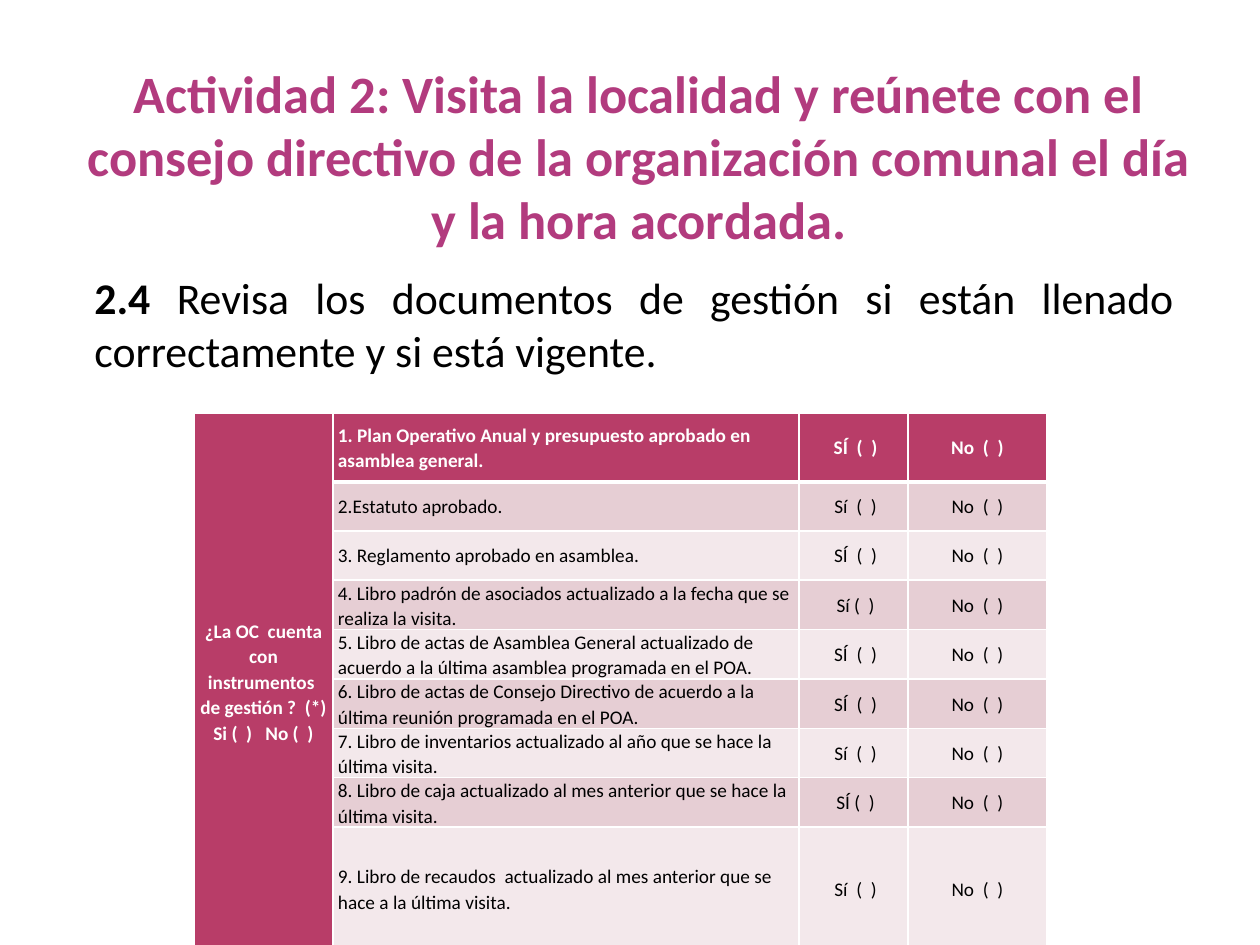
from dataclasses import dataclass

from lxml.etree import SubElement
from pptx import Presentation
from pptx.dml.color import RGBColor
from pptx.enum.text import MSO_ANCHOR as Anchor, MSO_AUTO_SIZE as AutoSize, PP_ALIGN as Align
from pptx.oxml.ns import qn
from pptx.util import Emu, Pt

EMU_PER_PX = 914400 / 126
FONT = "Calibri"
WHITE, BLACK = "FFFFFF", "000000"
PURPLE, CRIMSON = "B23B7E", "B83D68"
BANDS = ("F3E8EB", "E6CED4")

COLUMN_WIDTHS = (139, 466, 109, 139)
HEADER_HEIGHT, ROW_HEIGHT = 69, 49


@dataclass(frozen=True)
class Box:
    left: int
    top: int
    width: int
    height: int


@dataclass(frozen=True)
class Instrument:
    name: str
    yes: str


QUESTION = (
    "¿La OC  cuenta con instrumentos ",
    "de gestión ?  (*)",
    "Si (  )   No (  )",
)
NO = "No  (  )"
INSTRUMENTS = (
    Instrument("1. Plan Operativo Anual y presupuesto aprobado en asamblea general.", " SÍ  (  )"),
    Instrument("2.Estatuto aprobado.", " Sí  (  )"),
    Instrument("3. Reglamento aprobado en asamblea.", " SÍ  (  )"),
    Instrument("4. Libro padrón de asociados actualizado a la fecha que se realiza la visita.", " Sí (  )"),
    Instrument("5. Libro de actas de Asamblea General actualizado de acuerdo a la última "
               "asamblea programada en el POA.", " SÍ  (  )"),
    Instrument("6. Libro de actas de Consejo Directivo de acuerdo a la última reunión "
               "programada en el POA.", " SÍ  (  )"),
    Instrument("7. Libro de inventarios actualizado al año que se hace la última visita.", " Sí  (  )"),
    Instrument("8. Libro de caja actualizado al mes anterior que se hace la última visita.", " SÍ (  )"),
    Instrument("9. Libro de recaudos  actualizado al mes anterior que se hace a la última visita.",
               " Sí  (  )"),
)


def px(length: int) -> Emu:
    return Emu(round(length * EMU_PER_PX))


def rgb(value: str) -> RGBColor:
    return RGBColor.from_string(value)


def place(shape, box: Box) -> None:
    shape.left, shape.top = px(box.left), px(box.top)
    shape.width, shape.height = px(box.width), px(box.height)


def add_run(paragraph, text: str, size: int, color: str, bold: bool) -> None:
    run = paragraph.add_run()
    run.text = text
    run.font.name, run.font.size, run.font.bold = FONT, Pt(size), bold
    run.font.color.rgb = rgb(color)


def add_border(cell, side: str, points: int) -> None:
    """Draw a white border; side is L, R, T or B."""
    properties = cell._tc.get_or_add_tcPr()
    line = SubElement(properties, qn(f"a:ln{side}"), w=str(Pt(points)))
    fill = SubElement(line, qn("a:solidFill"))
    SubElement(fill, qn("a:srgbClr"), val=WHITE)


def fill_cell(cell, lines: tuple[str, ...], align: Align, row: int, header: bool) -> None:
    """Style a cell; borders go before the fill, as the schema orders them."""
    add_border(cell, "L", 1)
    add_border(cell, "R", 1)
    if row == 0:
        add_border(cell, "T", 1)
    add_border(cell, "B", 3 if header else 1)
    cell.fill.solid()
    cell.fill.fore_color.rgb = rgb(CRIMSON if header else BANDS[row % 2])
    cell.vertical_anchor = Anchor.MIDDLE
    cell.margin_left = cell.margin_right = px(5)
    cell.margin_top = cell.margin_bottom = 0
    paragraph = cell.text_frame.paragraphs[0]
    paragraph.alignment, paragraph.line_spacing = align, 1.07
    for index, line in enumerate(lines):
        if index:
            paragraph.add_line_break()
        add_run(paragraph, line, 11, WHITE if header else BLACK, header)


def add_title(slide, text: str) -> None:
    title = slide.shapes.title
    place(title, Box(60, 68, 1158, 176))
    frame = title.text_frame
    frame.auto_size, frame.word_wrap = AutoSize.NONE, True
    frame.vertical_anchor = Anchor.MIDDLE
    paragraph = frame.paragraphs[0]
    paragraph.alignment = Align.CENTER
    add_run(paragraph, text, 30, PURPLE, True)


def add_instruction(slide, number: str, text: str) -> None:
    instruction = slide.shapes.add_textbox(0, 0, 0, 0)
    place(instruction, Box(82, 265, 1104, 118))
    instruction.text_frame.word_wrap = True
    paragraph = instruction.text_frame.paragraphs[0]
    paragraph.alignment, paragraph.space_before = Align.JUSTIFY, Pt(5)
    add_run(paragraph, number, 25, BLACK, True)
    add_run(paragraph, text, 25, BLACK, False)


def add_checklist(slide) -> None:
    heights = [HEADER_HEIGHT] + [ROW_HEIGHT] * (len(INSTRUMENTS) - 1)
    table = slide.shapes.add_table(
        len(heights), len(COLUMN_WIDTHS),
        px(194), px(413), px(sum(COLUMN_WIDTHS)), px(sum(heights)),
    ).table
    for column, width in zip(table.columns, COLUMN_WIDTHS):
        column.width = px(width)
    for row, height in zip(table.rows, heights):
        row.height = px(height)

    question = table.cell(0, 0)
    question.merge(table.cell(len(heights) - 1, 0))
    fill_cell(question, QUESTION, Align.CENTER, 0, True)
    for row, instrument in enumerate(INSTRUMENTS):
        header = row == 0
        fill_cell(table.cell(row, 1), (instrument.name,), Align.LEFT, row, header)
        fill_cell(table.cell(row, 2), (instrument.yes,), Align.CENTER, row, header)
        fill_cell(table.cell(row, 3), (NO,), Align.CENTER, row, header)


def main() -> None:
    deck = Presentation()
    deck.slide_width, deck.slide_height = px(1260), px(945)
    slide = deck.slides.add_slide(deck.slide_layouts[5])
    add_title(slide, "Actividad 2: Visita la localidad y reúnete con el consejo directivo "
                     "de la organización comunal el día y la hora acordada.")
    add_instruction(slide, "2.4 ", "Revisa los documentos de gestión si están llenado "
                                   "correctamente y si está vigente. ")
    add_checklist(slide)
    deck.save("out.pptx")


if __name__ == "__main__":
    main()
